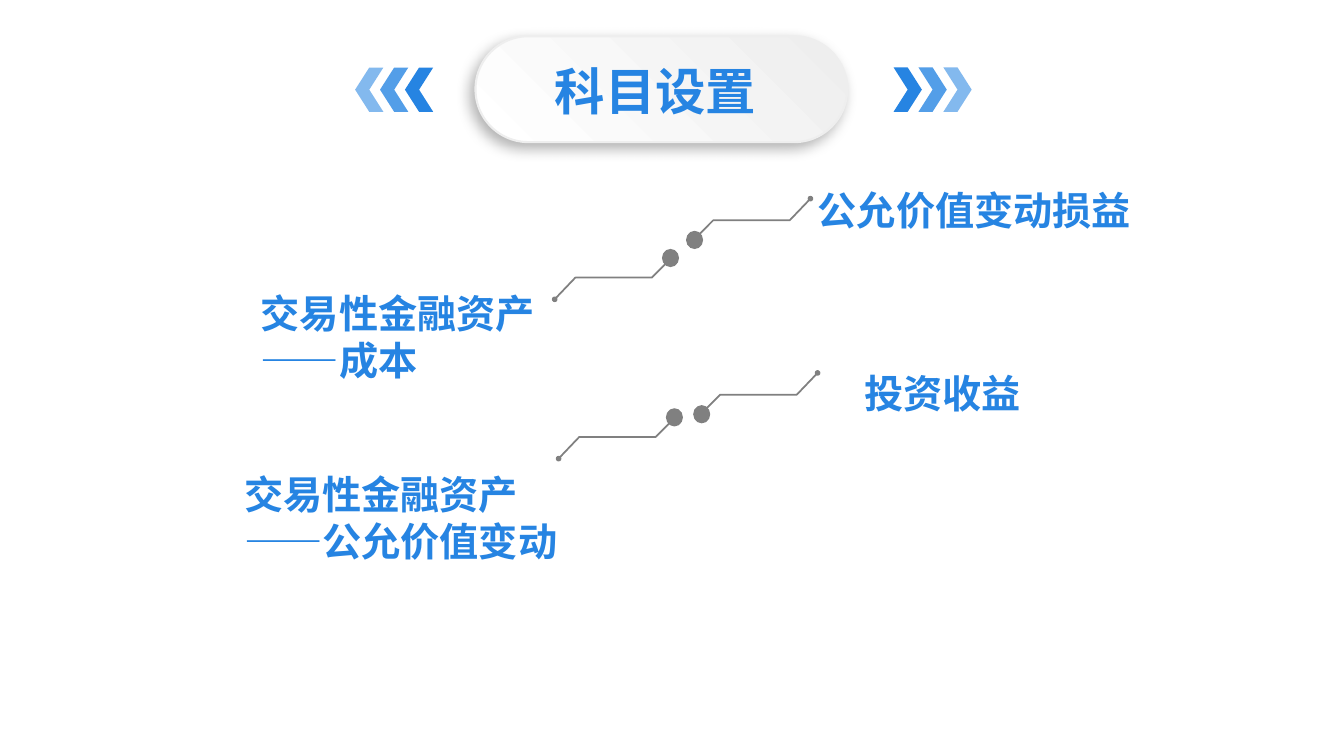
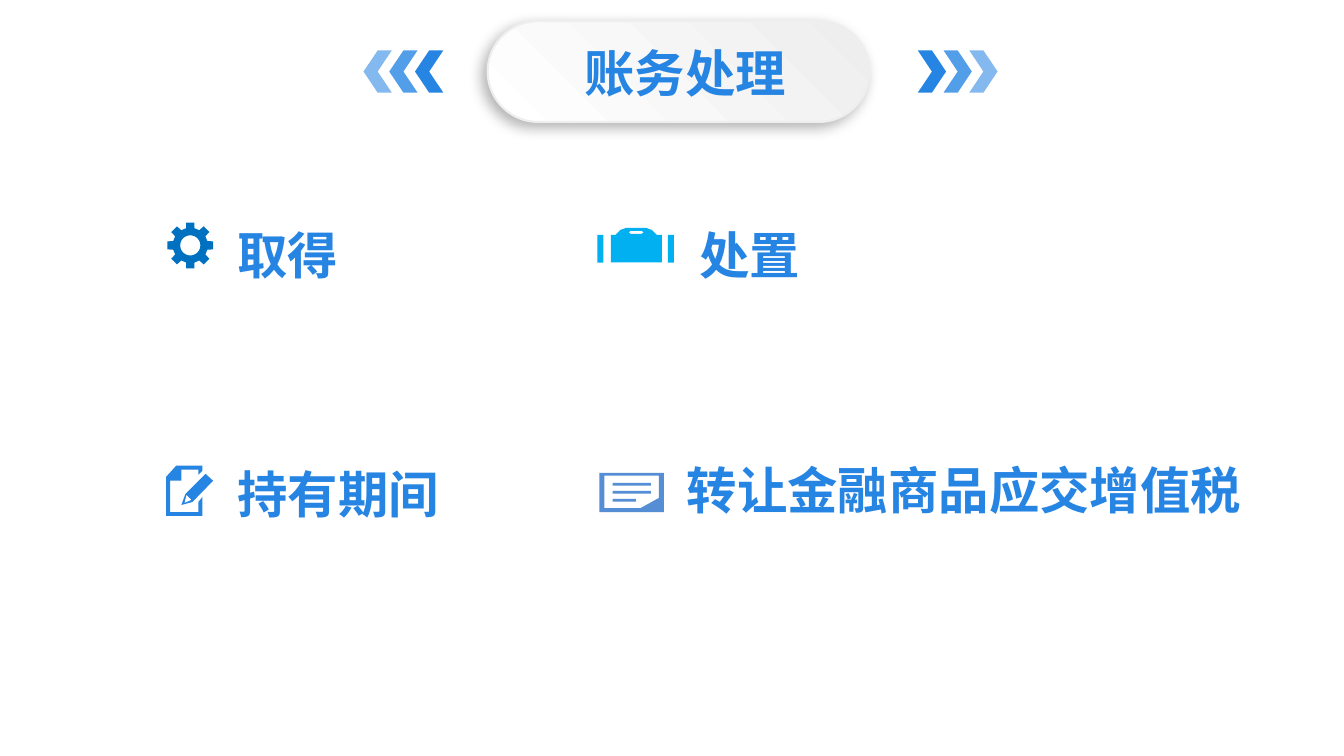
import math

import lxml.etree
import pptx
import pptx.dml.color
import pptx.enum.shapes
import pptx.enum.text
import pptx.oxml
import pptx.oxml.ns
import pptx.util

Pt = pptx.util.Pt
RGBColor = pptx.dml.color.RGBColor
SHAPES = pptx.enum.shapes.MSO_SHAPE
ANCHOR = pptx.enum.text.MSO_ANCHOR
ALIGN = pptx.enum.text.PP_ALIGN

BLUE = RGBColor(0x26, 0x84, 0xE2)
GEAR_BLUE = RGBColor(0x00, 0x70, 0xC0)
CASE_BLUE = RGBColor(0x00, 0xB0, 0xF0)
CARD_BLUE = RGBColor(0x55, 0x8E, 0xD5)
GRAY = RGBColor(0x80, 0x80, 0x80)
PALE = RGBColor(0xEE, 0xEE, 0xEE)
WHITE = RGBColor(0xFF, 0xFF, 0xFF)
TITLE_FONT = "Arial Narrow"
BODY_FONT = "Noto Sans CJK SC"

ACCOUNTS = {
    "title": "科目设置",
    "title_box": (320.4, 39.6, 296, 49),
    "pill": (339.8, 25.9, 265.7, 75.6),
    "chevrons": {"right": 638.6, "left": 289.4, "top": 48.2, "height": 31.7, "step": 17.8},
    "size": 28,
    "labels": [
        (["公允价值变动损益"], (577.4, 129.6, 246, 41), 1),
        (["投资收益"], (610.6, 253.4, 135, 48), 1.2),
        (["交易性金融资产", "——成本"], (179.3, 203, 218, 76), 1),
        (["交易性金融资产", "——公允价值变动"], (167.4, 332.6, 250, 76), 1),
    ],
}
TRAILS = [(496.4, 171.4, 1), (479.2, 184.3, -1), (501.5, 295.9, 1), (482, 298.1, -1)]
TRAIL_STEPS = [(0.7, -1.4), (13.3, -14), (68, -14), (82.8, -29.5)]

ENTRIES = {
    "title": "账务处理",
    "title_box": (355.7, 27.4, 268, 42.5),
    "pill": (348.5, 15.1, 272.9, 72),
    "chevrons": {"right": 655.9, "left": 296.6, "top": 36, "height": 30.2, "step": 18.4},
    "size": 36,
    "labels": [
        (["取得"], (162.7, 156.2, 220, 51), 1),
        (["持有期间"], (162.7, 326.9, 243, 51), 1),
        (["转让金融商品应交增值税"], (483.8, 324.7, 416, 51), 1),
        (["处置"], (492.5, 156.2, 198, 51), 1),
    ],
}

CASE = [
    [(436.5, 167.8), (439.9, 167.8), (443.5, 164.2), (447.8, 162.7), (461.5, 162.7),
     (465.8, 164.2), (469.4, 167.8), (473, 167.8), (473, 187.4), (436.5, 187.4)],
    [(450.7, 164.9), (458.6, 164.9), (460.1, 166), (458.6, 167), (450.7, 167), (449.3, 166)],
]
CARD = [
    [(428.4, 337.7), (474.5, 337.7), (474.5, 365.8), (428.4, 365.8)],
    [(432, 339.8), (470.9, 339.8), (470.9, 355.7), (457.9, 362.9), (432, 362.9)],
]
PAPER = [
    [(141.8, 365.8), (121.7, 365.8), (121.7, 343.4), (129.6, 343.4), (129.6, 335.5),
     (141.8, 335.5), (141.8, 339.1), (144.7, 336.2), (144.7, 332.6), (126, 332.6),
     (118.8, 340.6), (118.8, 368.6), (144.7, 368.6), (144.7, 355), (141.8, 358.6)],
]
PENCIL = [
    [(132.5, 352.8), (129.6, 360.7), (137.5, 358.6), (152.3, 343.4), (146.9, 338.4)],
    [(136.8, 357.1), (131.8, 359.3), (133.2, 353.5)],
]
CASE_BARS = [(427, 167.8, 4.3, 19.8), (477.4, 167.8, 4.3, 19.8)]
CARD_LINES = [(437.8, 344.9, 27.4, 2), (437.8, 350.6, 27.4, 2), (437.8, 356.4, 16.6, 2)]


def polar(center, radius, degrees):
    angle = math.radians(degrees)
    return center[0] + radius * math.cos(angle), center[1] + radius * math.sin(angle)


def gear_contours(center, outer, root, hole):
    teeth = [
        polar(center, radius, tooth * 45 + offset)
        for tooth in range(8)
        for radius, offset in ((root, -14), (outer, -10), (outer, 10), (root, 14))
    ]
    return [teeth, [polar(center, hole, -degrees) for degrees in range(0, 360, 10)]]


def paint(shape, color, alpha=100):
    shape.shadow.inherit = False
    shape.fill.solid()
    shape.fill.fore_color.rgb = color
    shape.line.fill.background()
    if alpha < 100:
        clr = shape.element.spPr.find(".//" + pptx.oxml.ns.qn("a:srgbClr"))
        lxml.etree.SubElement(clr, pptx.oxml.ns.qn("a:alpha")).set("val", str(alpha * 1000))


def add_preset(slide, preset, box, color, alpha=100):
    shape = slide.shapes.add_shape(preset, *map(Pt, box))
    paint(shape, color, alpha)
    return shape


def draw_outline(slide, contours, close=True):
    points = [[(Pt(x), Pt(y)) for x, y in contour] for contour in contours]
    builder = slide.shapes.build_freeform(*points[0][0], scale=1.0)
    builder.add_line_segments(points[0][1:], close=close)
    for contour in points[1:]:
        builder.move_to(*contour[0])
        builder.add_line_segments(contour[1:], close=close)
    return builder.convert_to_shape()


def write(shape, lines, font_name, size, frame_format, paragraph_format):
    frame = shape.text_frame
    for name, value in frame_format.items():
        setattr(frame, name, value)
    frame.text = "\n".join(lines)
    for paragraph in frame.paragraphs:
        for name, value in paragraph_format.items():
            setattr(paragraph, name, value)
        for run in paragraph.runs:
            for name, value in {"name": font_name, "size": Pt(size), "bold": True}.items():
                setattr(run.font, name, value)
            run.font.color.rgb = BLUE
            east_asian = lxml.etree.SubElement(run.font._element, pptx.oxml.ns.qn("a:ea"))
            east_asian.set("typeface", BODY_FONT)


def add_pill(slide, box):
    pill = slide.shapes.add_shape(SHAPES.ROUNDED_RECTANGLE, *map(Pt, box))
    pill.adjustments[0] = 0.5
    pill.fill.gradient()
    pill.fill.gradient_angle = 225
    for stop, color, position in zip(pill.fill.gradient_stops, (PALE, WHITE), (0, 1)):
        stop.color.rgb = color
        stop.position = position
    pill.line.color.rgb = PALE
    pill.line.width = Pt(1.5)
    pill.shadow.inherit = False
    effects = pill.element.spPr.find(pptx.oxml.ns.qn("a:effectLst"))
    effects.append(pptx.oxml.parse_xml(
        f'<a:outerShdw {pptx.oxml.ns.nsdecls("a")} blurRad="{Pt(10)}" dist="{Pt(5)}" '
        'dir="8100000" algn="tr" rotWithShape="0">'
        '<a:srgbClr val="000000"><a:alpha val="30000"/></a:srgbClr></a:outerShdw>'))


def add_chevrons(slide, right, left, top, height, step):
    for index, alpha in enumerate((100, 79, 57)):
        for start, direction, rotation in ((right, 1, 0), (left, -1, 180)):
            box = (start + direction * index * step, top, 20.2, height)
            add_preset(slide, SHAPES.CHEVRON, box, BLUE, alpha).rotation = rotation


def add_page(presentation, page):
    slide = presentation.slides.add_slide(presentation.slide_layouts[5])
    add_pill(slide, page["pill"])
    add_chevrons(slide, **page["chevrons"])
    title = slide.shapes.title
    title.element.getparent().append(title.element)
    title.left, title.top, title.width, title.height = map(Pt, page["title_box"])
    write(title, [page["title"]], TITLE_FONT, 36, {
        "word_wrap": True, "auto_size": pptx.enum.text.MSO_AUTO_SIZE.NONE,
        "vertical_anchor": ANCHOR.TOP, "margin_left": Pt(5), "margin_right": Pt(5),
        "margin_top": Pt(3), "margin_bottom": Pt(3),
    }, {"alignment": ALIGN.CENTER})
    for lines, box, spacing in page["labels"]:
        write(slide.shapes.add_textbox(*map(Pt, box)), lines, BODY_FONT, page["size"],
              {"word_wrap": True, "vertical_anchor": ANCHOR.TOP},
              {"alignment": ALIGN.LEFT, "line_spacing": spacing})
    return slide


def add_dot(slide, x, y, width, height):
    add_preset(slide, SHAPES.OVAL, (x - width / 2, y - height / 2, width, height), GRAY)


def add_trail(slide, x, y, direction):
    points = [(x + direction * dx, y + direction * dy) for dx, dy in TRAIL_STEPS]
    trail = draw_outline(slide, [points], close=False)
    trail.shadow.inherit = False
    trail.fill.background()
    trail.line.color.rgb = GRAY
    trail.line.width = Pt(1.25)
    add_dot(slide, *points[-1], 4, 4)
    add_dot(slide, x, y, 12.2, 13)


def main():
    presentation = pptx.Presentation()
    presentation.slide_width, presentation.slide_height = Pt(960.5), Pt(540)
    accounts = add_page(presentation, ACCOUNTS)
    for trail in TRAILS:
        add_trail(accounts, *trail)
    entries = add_page(presentation, ENTRIES)
    gear = gear_contours((136, 175.3), 16.6, 12.6, 7.2)
    for contours, color in ((gear, GEAR_BLUE), (CASE, CASE_BLUE), (CARD, CARD_BLUE),
                            (PAPER, BLUE), (PENCIL, BLUE)):
        paint(draw_outline(entries, contours), color)
    for boxes, color in ((CASE_BARS, CASE_BLUE), (CARD_LINES, CARD_BLUE)):
        for box in boxes:
            add_preset(entries, SHAPES.RECTANGLE, box, color)
    presentation.save("out.pptx")


if __name__ == "__main__":
    main()
